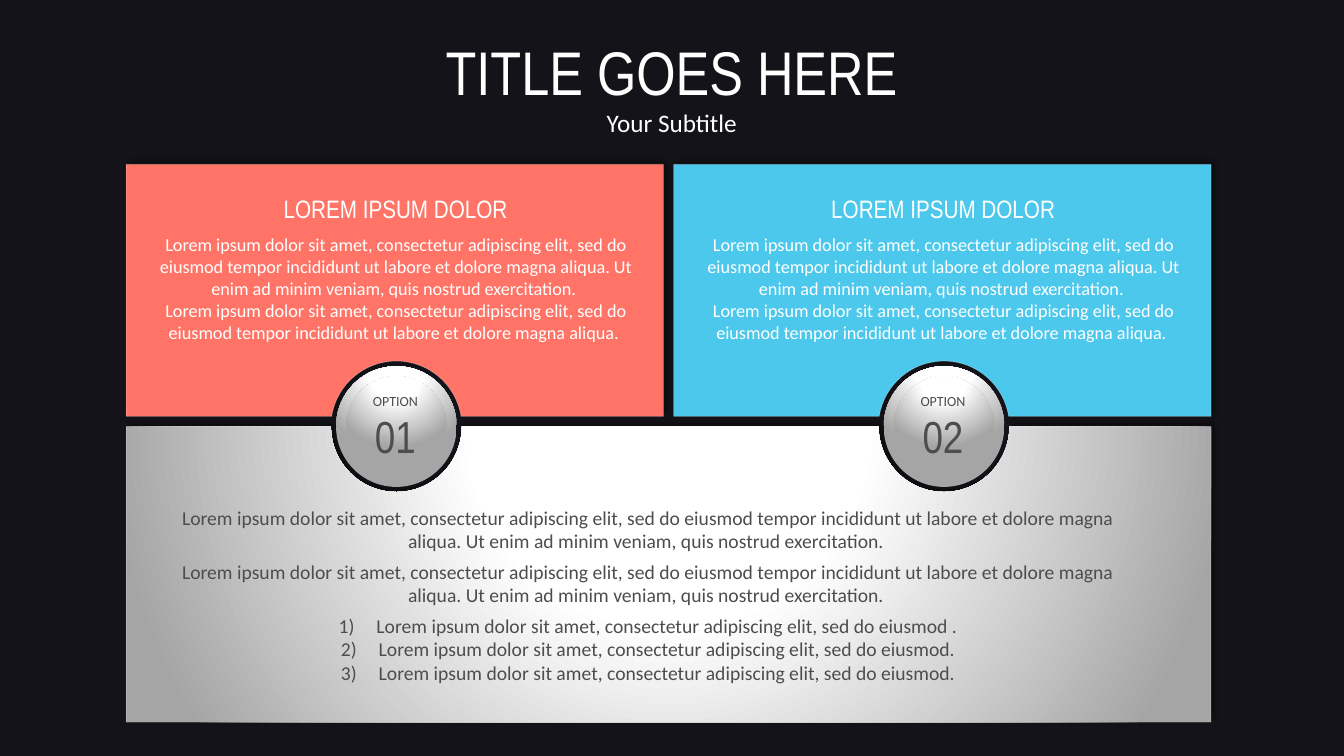
from math import asin, cos, pi, sin, tan

from lxml import etree
from pptx import Presentation
from pptx.dml.color import RGBColor
from pptx.enum.shapes import MSO_SHAPE
from pptx.enum.text import MSO_ANCHOR, MSO_AUTO_SIZE, PP_ALIGN
from pptx.oxml import parse_xml
from pptx.oxml.ns import nsdecls, qn
from pptx.util import Cm, Pt

OVAL, RECTANGLE = MSO_SHAPE.OVAL, MSO_SHAPE.RECTANGLE
TOP, MIDDLE = MSO_ANCHOR.TOP, MSO_ANCHOR.MIDDLE
CENTER = PP_ALIGN.CENTER
NO_FIT = MSO_AUTO_SIZE.NONE

PURPLE = RGBColor(0x52, 0x4E, 0x67)
BLACK = RGBColor(0x00, 0x00, 0x00)
WHITE = RGBColor(0xFF, 0xFF, 0xFF)
GREY = RGBColor(0x4D, 0x4D, 0x4D)
CORAL = RGBColor(0xFF, 0x74, 0x67)
SKY = RGBColor(0x4C, 0xC8, 0xEC)
HEAD_FONT, BODY_FONT = "Arial Narrow", "Calibri"

# Content
TITLE, SUBTITLE = "TITLE GOES HERE", "Your Subtitle"
SHORT = ("Lorem ipsum dolor sit amet, consectetur adipiscing elit, sed do eiusmod "
         "tempor incididunt ut labore et dolore magna aliqua. ")
LONG = SHORT + "Ut enim ad minim veniam, quis nostrud exercitation. "
CARD_HEADING = "LOREM IPSUM DOLOR"
OPTIONS = [("01", CORAL), ("02", SKY)]
PANEL_TEXTS = [LONG, LONG]
PANEL_STEPS = [
    "Lorem ipsum dolor sit amet, consectetur adipiscing elit, sed do eiusmod .",
    "Lorem ipsum dolor sit amet, consectetur adipiscing elit, sed do eiusmod.",
    "Lorem ipsum dolor sit amet, consectetur adipiscing elit, sed do eiusmod.",
]

# Layout in centimetres
SLIDE_W, SLIDE_H = 33.87, 19.05
LEFT, CARD_TOP, CARD_W, CARD_H, GAP = 3.18, 4.14, 13.54, 6.35, 0.26
CARD_BOTTOM = CARD_TOP + CARD_H
RIGHT = LEFT + 2 * CARD_W + GAP
PANEL_TOP, PANEL_BOTTOM = CARD_BOTTOM + GAP, 18.2
CARD_LEFTS = [LEFT + i * (CARD_W + GAP) for i in range(len(OPTIONS))]
BADGE_XS = [left + 6.81 for left in CARD_LEFTS]
NOTCH_R, BADGE_R, BADGE_INNER_R = 1.65, 1.52, 1.27


def notch(center_x, start, end):
    """Straight point, then two curves (two controls and an end each).

    Angles are counted anticlockwise from the right.
    """
    def place(angle, slope):
        return (center_x + NOTCH_R * (cos(angle) - slope * sin(angle)),
                PANEL_TOP - NOTCH_R * (sin(angle) + slope * cos(angle)))

    middle = (start + end) / 2
    handle = 4 / 3 * tan((middle - start) / 4)
    curves = [(place(a, handle), place(b, -handle), place(b, 0))
              for a, b in [(start, middle), (middle, end)]]
    return [(place(start, 0),), *curves]


def add_alpha(fill_owner, percent):
    colour = next(fill_owner.iter(qn("a:srgbClr")))
    etree.SubElement(colour, qn("a:alpha"), val=str(percent * 1000))


def metal_fill(shape):
    """Fill with the circular white to grey gradient."""
    shape.fill.background()
    stops = "".join(
        f'<a:gs pos="{pos}"><a:srgbClr val="{colour}"/></a:gs>'
        for pos, colour in [(0, "FFFFFF"), (35000, "FFFFFF"), (100000, "A5A5A5")])
    gradient = parse_xml(
        f'<a:gradFill {nsdecls("a")} rotWithShape="1"><a:gsLst>{stops}</a:gsLst>'
        '<a:path path="circle"><a:fillToRect l="50000" t="-80000" r="50000" b="180000"/>'
        '</a:path></a:gradFill>')
    properties = shape.element.spPr
    properties.replace(properties.find(qn("a:noFill")), gradient)


def add_block(slide, segments, colour=None):
    """Outlined, shadowed block of lines and curves; metal when no colour is given."""
    segments = [[(Cm(x), Cm(y)) for x, y in segment] for segment in segments]
    ends = [segment[-1] for segment in segments]
    builder = slide.shapes.build_freeform(*ends[0], scale=1.0)
    builder.add_line_segments(ends[1:], close=True)
    block = builder.convert_to_shape()
    lines = list(block.element.spPr.iter(qn("a:lnTo")))
    for line, segment in zip(lines, segments[1:]):
        if len(segment) == 3:
            points = "".join(f'<a:pt x="{x - block.left}" y="{y - block.top}"/>'
                             for x, y in segment)
            curve = parse_xml(f'<a:cubicBezTo {nsdecls("a")}>{points}</a:cubicBezTo>')
            line.getparent().replace(line, curve)
    if colour is None:
        metal_fill(block)
    else:
        block.fill.solid()
        block.fill.fore_color.rgb = colour
    block.line.color.rgb = WHITE
    block.line.width = Pt(0.5)
    add_alpha(block.element.spPr.find(qn("a:ln")), 25)
    block.shadow.inherit = False
    effects = block.element.spPr.find(qn("a:effectLst"))
    effects.append(parse_xml(
        f'<a:outerShdw {nsdecls("a")} blurRad="{Pt(4)}" dist="{Pt(3)}" dir="18900000" '
        'algn="bl" rotWithShape="0"><a:srgbClr val="000000"><a:alpha val="40000"/>'
        '</a:srgbClr></a:outerShdw>'))


def write(box, lines, colour, anchor=TOP, wrap=True):
    """Fill a box with (text, font, size, space before, numbered) lines."""
    frame = box.text_frame
    frame.word_wrap = wrap
    frame.auto_size = NO_FIT
    frame.vertical_anchor = anchor
    for i, (text, font, size, before, numbered) in enumerate(lines):
        paragraph = frame.paragraphs[0] if i == 0 else frame.add_paragraph()
        paragraph.text = text
        paragraph.alignment = CENTER
        if before:
            paragraph.space_before = Pt(before)
        if numbered:
            properties = paragraph._p.get_or_add_pPr()
            properties.set("marL", "342900")
            properties.set("indent", "-342900")
            etree.SubElement(properties, qn("a:buFont"), typeface="+mj-lt")
            etree.SubElement(properties, qn("a:buAutoNum"), type="arabicParenR")
        paragraph.font.name = font
        paragraph.font.size = Pt(size)
        paragraph.font.color.rgb = colour


def add_badge(slide, center_x, number):
    badge = slide.shapes.add_group_shape().shapes
    for radius in (BADGE_R, BADGE_INNER_R):
        disc = badge.add_shape(OVAL, Cm(center_x - radius), Cm(PANEL_TOP - radius),
                               Cm(2 * radius), Cm(2 * radius))
        metal_fill(disc)
        disc.line.fill.background()
        disc.shadow.inherit = False
    label = badge.add_textbox(Cm(center_x - 1.08), Cm(9.88), Cm(2.11), Cm(1.78))
    write(label, [("OPTION", BODY_FONT, 10, 0, False),
                  (number, HEAD_FONT, 32, 0, False)], GREY, MIDDLE, wrap=False)


def main():
    deck = Presentation()
    deck.slide_width, deck.slide_height = Cm(SLIDE_W), Cm(SLIDE_H)
    slide = deck.slides.add_slide(deck.slide_layouts[5])
    slide.background.fill.solid()
    slide.background.fill.fore_color.rgb = PURPLE

    title = slide.shapes.title
    title.left, title.top, title.width, title.height = Cm(9.28), Cm(0.72), Cm(15.3), Cm(3.6)
    write(title, [(TITLE, HEAD_FONT, 44, 0, False),
                  (SUBTITLE, BODY_FONT, 18, 0, False)], WHITE)

    shade = slide.shapes.add_shape(RECTANGLE, 0, 0, deck.slide_width, deck.slide_height)
    shade.fill.solid()
    shade.fill.fore_color.rgb = BLACK
    add_alpha(shade.element.spPr, 75)
    shade.line.fill.background()
    shade.shadow.inherit = False
    title.element.addprevious(shade.element)

    notch_start = asin(GAP / NOTCH_R)
    for left, badge_x, (_, colour) in zip(CARD_LEFTS, BADGE_XS, OPTIONS):
        right = left + CARD_W
        add_block(slide, [[(left, CARD_TOP)], [(right, CARD_TOP)], [(right, CARD_BOTTOM)],
                          *notch(badge_x, notch_start, pi - notch_start),
                          [(left, CARD_BOTTOM)]], colour)
    notches = [segment for x in BADGE_XS for segment in notch(x, pi, 2 * pi)]
    add_block(slide, [[(LEFT, PANEL_TOP)], *notches, [(RIGHT, PANEL_TOP)],
                      [(RIGHT, PANEL_BOTTOM)], [(LEFT, PANEL_BOTTOM)]])

    for left in CARD_LEFTS:
        card_text = slide.shapes.add_textbox(Cm(left + 0.44), Cm(4.74), Cm(12.7), Cm(4.06))
        write(card_text, [(CARD_HEADING, HEAD_FONT, 18, 0, False),
                          (LONG, BODY_FONT, 13, 7.3, False),
                          (SHORT, BODY_FONT, 13, 0, False)], WHITE)

    panel_text = slide.shapes.add_textbox(Cm(4.29), Cm(12.62), Cm(24.1), Cm(4.78))
    panel_lines = [(text, BODY_FONT, 14, 4.9 if i else 0, False)
                   for i, text in enumerate(PANEL_TEXTS)]
    panel_lines += [(step, BODY_FONT, 14, 0 if i else 4.9, True)
                    for i, step in enumerate(PANEL_STEPS)]
    write(panel_text, panel_lines, GREY)

    for badge_x, (number, _) in zip(BADGE_XS, OPTIONS):
        add_badge(slide, badge_x, number)

    deck.save("out.pptx")


if __name__ == "__main__":
    main()
